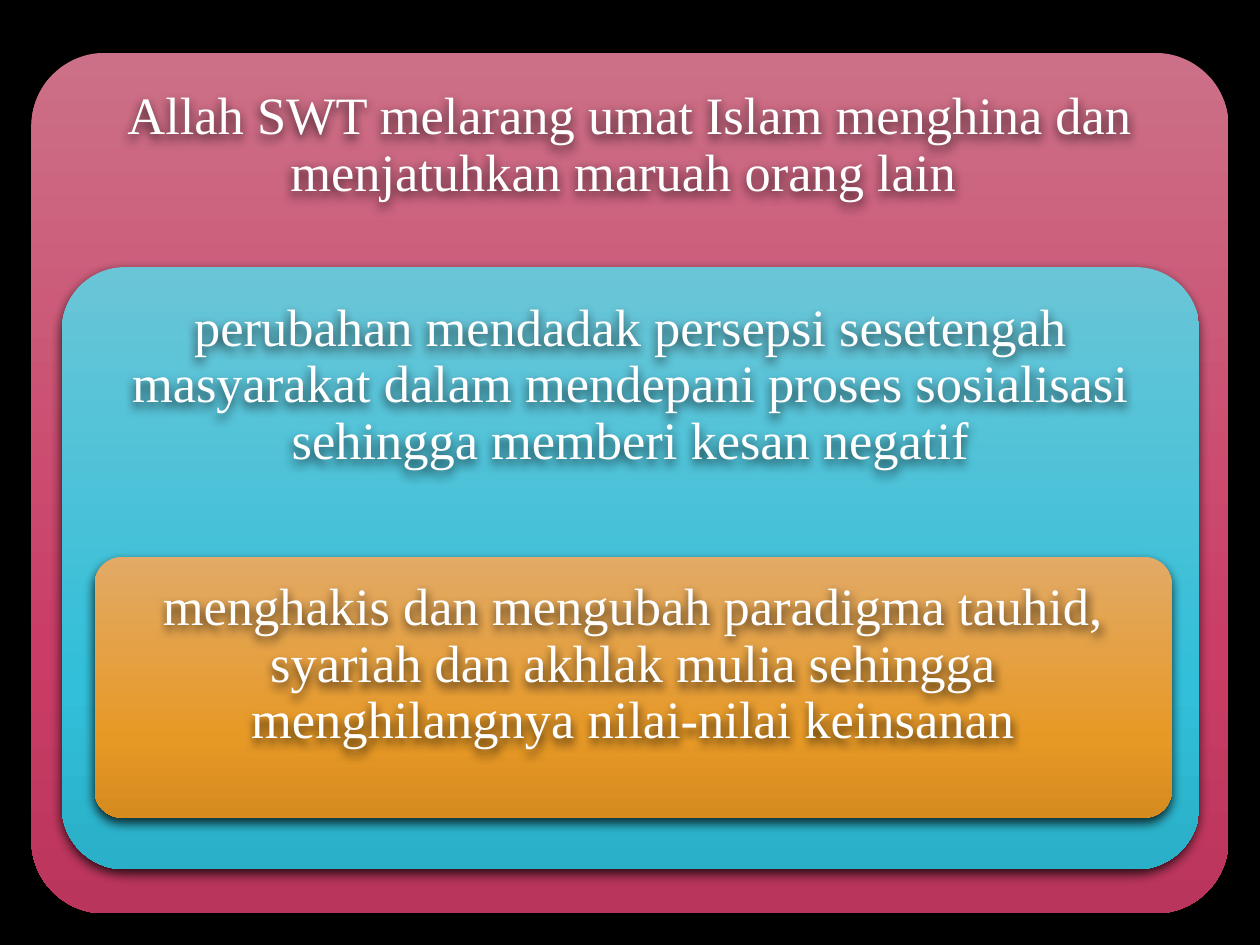
import math
from dataclasses import dataclass

from lxml import etree
from pptx import Presentation
from pptx import util as u
from pptx.dml.color import RGBColor
from pptx.enum import shapes, text
from pptx.oxml import ns


@dataclass(frozen=True)
class Theme:
    background: str = "000000"
    ink: str = "FFFFFF"
    shadow: str = "000000"
    rose: tuple = ("CC7087", "CA3D66", "BA355B")
    aqua: tuple = ("6AC5D7", "32BFD9", "2AB0C8")
    amber: tuple = ("E2AA66", "E79926", "D68B1F")
    stops: tuple = (0, 69, 100)
    font: str = "Times New Roman"
    size: int = 30


class NestedSlide:
    """Draws on a grid of 100 columns by 75 rows, each 0.1 inch."""

    COLUMNS, ROWS = 100, 75

    def __init__(self, deck, theme):
        self.theme = theme
        self.cell = deck.slide_width / self.COLUMNS
        self.slide = deck.slides.add_slide(deck.slide_layouts[6])
        backdrop = self.slide.background.fill
        backdrop.solid()
        backdrop.fore_color.rgb = RGBColor.from_string(theme.background)
        self.group = self.slide.shapes.add_group_shape()

    def lengths(self, *cells):
        return [u.Emu(round(n * self.cell)) for n in cells]

    def add_shadow(self, shape):
        shape.shadow.inherit = False
        effects = shape._element.spPr.find(ns.qn("a:effectLst"))
        shadow = etree.SubElement(
            effects, ns.qn("a:outerShdw"), blurRad=str(u.Pt(6)),
            dist=str(u.Pt(3)), dir="5400000", algn="ctr", rotWithShape="0")
        self.add_color(shadow, self.theme.shadow, 76)

    @staticmethod
    def add_color(parent, rgb, alpha=100):
        color = etree.SubElement(parent, ns.qn("a:srgbClr"), val=rgb)
        if alpha < 100:
            etree.SubElement(color, ns.qn("a:alpha"), val=str(alpha * 1000))

    def panel(self, box, corner, colors):
        panel = self.group.shapes.add_shape(
            shapes.MSO_SHAPE.ROUNDED_RECTANGLE, *self.lengths(*box))
        panel.adjustments[0] = corner
        panel.line.fill.background()
        # Three-stop vertical gradient
        panel.fill.gradient()
        panel.fill.gradient_angle = 270
        stops = panel._element.spPr.find(".//" + ns.qn("a:gsLst"))
        for old in list(stops):
            stops.remove(old)
        for position, rgb in zip(self.theme.stops, colors):
            stop = etree.SubElement(stops, ns.qn("a:gs"), pos=str(position * 1000))
            self.add_color(stop, rgb)
        self.add_shadow(panel)

    def label(self, box, corner, words):
        # The text area starts where the rounded corner's arc is at 45 degrees
        left, top, width, height = box
        inset = corner * min(width, height) * (1 - math.sqrt(0.5))
        label = self.group.shapes.add_textbox(*self.lengths(
            left + inset, top + inset, width - 2 * inset, height - 2 * inset))
        frame = label.text_frame
        margin, = self.lengths(1.2)
        frame_format = {
            "word_wrap": True, "auto_size": text.MSO_AUTO_SIZE.NONE,
            "vertical_anchor": text.MSO_ANCHOR.TOP,
            "margin_left": margin, "margin_top": margin,
            "margin_right": margin, "margin_bottom": margin}
        paragraph = frame.paragraphs[0]
        run = paragraph.add_run()
        run.text = words
        size = self.theme.size
        formats = (
            (frame, frame_format),
            (paragraph, {"alignment": text.PP_ALIGN.CENTER, "line_spacing": 0.9,
                         "space_after": u.Pt(0.35 * size)}),
            (run.font, {"size": u.Pt(size), "name": self.theme.font}))
        for target, values in formats:
            for name, value in values.items():
                setattr(target, name, value)
        run.font.color.rgb = RGBColor.from_string(self.theme.ink)
        # With no fill, the shadow falls from the letters
        self.add_shadow(label)


def main():
    theme = Theme()
    deck = Presentation()
    deck.slide_width, deck.slide_height = u.Inches(10), u.Inches(7.5)
    nested = NestedSlide(deck, theme)

    # Layers from the outside in: box, corner, colours, wording
    layers = (
        ((2.5, 4.2, 95, 68.3), 0.085, theme.rose,
         "Allah SWT melarang umat Islam menghina dan menjatuhkan maruah "
         "orang lain "),
        ((4.9, 21.2, 90.3, 47.8), 0.105, theme.aqua,
         "perubahan mendadak persepsi sesetengah masyarakat dalam mendepani "
         "proses sosialisasi sehingga memberi kesan negatif"),
        ((7.5, 44.2, 85.5, 20.7), 0.105, theme.amber,
         "menghakis dan mengubah paradigma tauhid, syariah dan akhlak mulia "
         "sehingga menghilangnya nilai-nilai keinsanan"),
    )
    for box, corner, colors, words in layers:
        nested.panel(box, corner, colors)
        nested.label(box, corner, words)

    deck.save("out.pptx")


if __name__ == "__main__":
    main()
